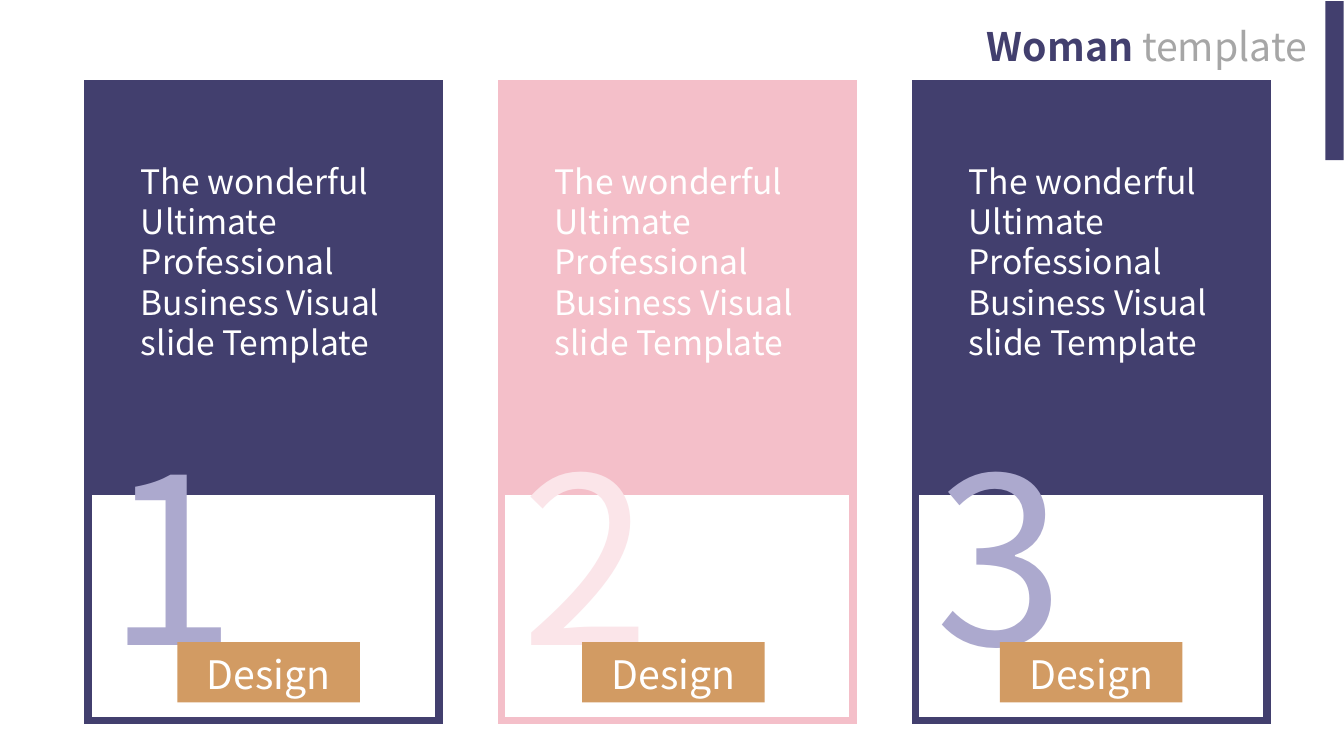
from lxml import etree
from pptx import Presentation, util as u
from pptx.dml.color import RGBColor
from pptx.enum import shapes, text
from pptx.oxml import ns

Cm, Pt = u.Cm, u.Pt
FONT = "Noto Sans CJK JP"
COLOURS = {
    "navy": "423F6E",
    "lavender": "ACA9CE",
    "pink": "F4BFC9",
    "blush": "FBE5E9",
    "ochre": "D29B63",
    "grey": "A6A6A6",
    "white": "FFFFFF",
}
MESSAGE = "The wonderful Ultimate Professional Business Visual slide Template"
# Number, frame colour, number colour, left offset of the label in its card
CARDS = [
    ("1", "navy", "lavender", 2.26),
    ("2", "pink", "blush", 2.03),
    ("3", "navy", "lavender", 2.13),
]
CARD_LEFT, CARD_TOP, CARD_WIDTH, CARD_STEP = 2.21, 2.11, 8.86, 10.43


def colour(name):
    return RGBColor.from_string(COLOURS[name])


def apply(target, values):
    for attribute, value in values.items():
        setattr(target, attribute, value)


def add_panel(slide, box, fill, outline=None):
    """Add a rectangle, with a sharp-cornered outline if one is named."""
    panel = slide.shapes.add_shape(
        shapes.MSO_SHAPE.RECTANGLE, *(Cm(length) for length in box))
    panel.shadow.inherit = False
    panel.fill.solid()
    panel.fill.fore_color.rgb = colour(fill)
    if outline:
        panel.line.color.rgb = colour(outline)
        panel.line.width = Pt(5.5)
        border = panel.element.spPr.find(ns.qn("a:ln"))
        etree.SubElement(border, ns.qn("a:miter")).set("lim", "800000")
    else:
        panel.line.fill.background()
    return panel


def write(frame, runs, size, align=text.PP_ALIGN.LEFT, **frame_format):
    """Fill the frame with one paragraph of (wording, colour, bold) runs."""
    apply(frame, {"word_wrap": True,
                  "auto_size": text.MSO_AUTO_SIZE.SHAPE_TO_FIT_TEXT,
                  "vertical_anchor": text.MSO_ANCHOR.TOP, **frame_format})
    paragraph = frame.paragraphs[0]
    paragraph.alignment = align
    for wording, ink, bold in runs:
        run = paragraph.add_run()
        run.text = wording
        apply(run.font, {"name": FONT, "size": Pt(size), "bold": bold})
        run.font.color.rgb = colour(ink)


def add_text(slide, box, wording, ink, size, **frame_format):
    textbox = slide.shapes.add_textbox(*(Cm(length) for length in box))
    write(textbox.text_frame, [(wording, ink, False)], size, **frame_format)


def add_header(slide, left, top, width, height):
    add_panel(slide, (33.4, 0.03, 0.46, 4.01), "navy")
    title = slide.shapes.title
    apply(title, {"left": Cm(left), "top": Cm(top),
                  "width": Cm(width), "height": Cm(height)})
    write(title.text_frame,
          [("Woman ", "navy", True), ("template", "grey", False)],
          28, text.PP_ALIGN.RIGHT, word_wrap=False)


def add_card(slide, left, top, width, number, frame, ink, label_offset):
    add_panel(slide, (left, top, width, 10.21), frame, frame)
    add_panel(slide, (left, top + 10.26, width, 5.79), "white", frame)
    add_text(slide, (left + 0.25, top + 8.18, 4.19, 7.34),
             number, ink, 166, word_wrap=False)
    add_text(slide, (left + 1.09, top + 1.81, 6.71, 6.4), MESSAGE, "white", 24)
    label = add_panel(
        slide, (left + label_offset, top + 14.07, 4.6, 1.52), "ochre")
    write(label.text_frame, [("Design", "white", False)], 28,
          text.PP_ALIGN.CENTER, margin_top=Cm(0.2))


def main():
    deck = Presentation()
    apply(deck, {"slide_width": Cm(33.87), "slide_height": Cm(19.05)})
    slide = deck.slides.add_slide(deck.slide_layouts.get_by_name("Title Only"))
    for column, card in enumerate(CARDS):
        add_card(slide, CARD_LEFT + column * CARD_STEP, CARD_TOP, CARD_WIDTH, *card)
    add_header(slide, 24.07, 0.43, 9.12, 1.45)
    deck.save("out.pptx")


if __name__ == "__main__":
    main()
